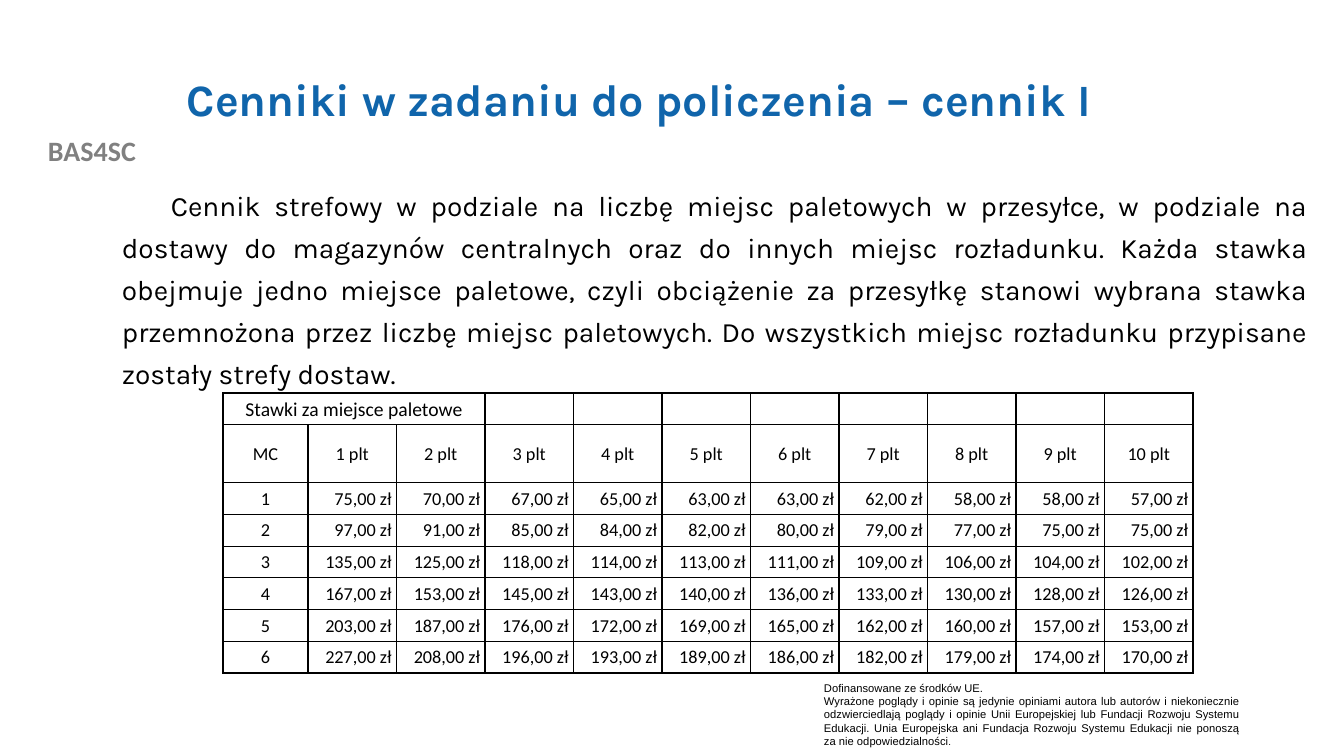
"""Build the slide with the zone price list per pallet place."""
from dataclasses import dataclass

from lxml import etree
from pptx import Presentation
from pptx.dml.color import RGBColor
from pptx.enum.text import MSO_ANCHOR, MSO_AUTO_SIZE, PP_ALIGN
from pptx.oxml.ns import qn
from pptx.util import Emu, Pt

LEFT, MID, RIGHT, JUST = PP_ALIGN.LEFT, PP_ALIGN.CENTER, PP_ALIGN.RIGHT, PP_ALIGN.JUSTIFY
TOP, CENTRE = MSO_ANCHOR.TOP, MSO_ANCHOR.MIDDLE
FIXED, GROW = MSO_AUTO_SIZE.NONE, MSO_AUTO_SIZE.SHAPE_TO_FIT_TEXT
SCALE = 914400 / 100.8
BLACK = "000000"


@dataclass(frozen=True)
class Label:
    """A text box; each paragraph is a tuple of (text, size) runs."""
    left: int
    top: int
    width: int
    height: int
    lines: tuple
    face: str
    tint: str = BLACK
    bold: bool = False
    align: PP_ALIGN = JUST
    anchor: MSO_ANCHOR = TOP
    fit: MSO_AUTO_SIZE = GROW
    pitch: float = 1.0
    after: int = 0
    indent: int = 0


LABELS = (
    Label(0, 129, 184, 44, ((("BAS4SC", 20),),), "Calibri", "808080", True, MID),
    Label(814, 676, 436, 78, (
        (("Dofinansowane ze środków UE.", 8),),
        (("Wyrażone poglądy i opinie są jedynie opiniami autora lub autorów i "
          "niekoniecznie odzwierciedlają poglądy i opinie Unii Europejskiej lub "
          "Fundacji Rozwoju Systemu Edukacji. Unia Europejska ani Fundacja Rozwoju "
          "Systemu Edukacji nie ponoszą za nie odpowiedzialności", 8), (".", 7)),
    ), "Arial"),
    Label(177, 40, 1075, 123, ((("Cenniki w zadaniu do policzenia – cennik I", 32),),),
          "Karla", "1065AB", True, LEFT, CENTRE, FIXED, 0.9),
    Label(112, 175, 1206, 218, ((
        ("Cennik strefowy w podziale na liczbę miejsc paletowych w przesyłce, w "
         "podziale na dostawy do magazynów centralnych oraz do innych miejsc "
         "rozładunku. Każda stawka obejmuje jedno miejsce paletowe, czyli obciążenie "
         "za przesyłkę stanowi wybrana stawka przemnożona przez liczbę miejsc "
         "paletowych. Do wszystkich miejsc rozładunku przypisane zostały strefy "
         "dostaw.", 20),),), "Karla", pitch=1.25, after=6, indent=49),
)

RATES = (
    (75, 70, 67, 65, 63, 63, 62, 58, 58, 57),
    (97, 91, 85, 84, 82, 80, 79, 77, 75, 75),
    (135, 125, 118, 114, 113, 111, 109, 106, 104, 102),
    (167, 153, 145, 143, 140, 136, 133, 130, 128, 126),
    (203, 187, 176, 172, 169, 165, 162, 160, 157, 153),
    (227, 208, 196, 193, 189, 186, 182, 179, 174, 170),
)
WIDTH, HEIGHT = 970, 280
FIRST, HEAD = 85, 58


def px(length: float) -> Emu:
    """Turn pixels into EMU."""
    return Emu(round(length * SCALE))


def ink(tint: str) -> RGBColor:
    """Turn a hex string into a colour."""
    return RGBColor.from_string(tint)


def style(font, face: str, size: int, tint: str, bold: bool = False) -> None:
    """Set the look of a font."""
    font.name, font.size, font.bold = face, Pt(size), bold
    font.color.rgb = ink(tint)


def add_label(slide, label: Label) -> None:
    """Draw one text box."""
    box = slide.shapes.add_textbox(*map(px, (label.left, label.top, label.width, label.height)))
    frame = box.text_frame
    frame.word_wrap = True
    frame.auto_size, frame.vertical_anchor = label.fit, label.anchor
    for i, line in enumerate(label.lines):
        para = frame.add_paragraph() if i else frame.paragraphs[0]
        para.alignment, para.line_spacing = label.align, label.pitch
        para.space_after = Pt(label.after)
        if label.indent:
            para._p.get_or_add_pPr().set("indent", str(px(label.indent)))
        base = line[0][1]
        style(para.font, label.face, base, label.tint, label.bold)
        for text, size in line:
            run = para.add_run()
            run.text = text
            if size != base:
                run.font.size = Pt(size)


def add_edges(cell) -> None:
    """Give a cell a thin black line on each side."""
    props = cell._tc.get_or_add_tcPr()
    for side in ("lnL", "lnR", "lnT", "lnB"):
        edge = etree.SubElement(props, qn(f"a:{side}"), w=str(Pt(1)))
        fill = etree.SubElement(edge, qn("a:solidFill"))
        etree.SubElement(fill, qn("a:srgbClr"), val=BLACK)


def fill_cell(cell, text: str, size: int, align: PP_ALIGN) -> None:
    """Write and style one cell."""
    add_edges(cell)
    cell.fill.background()
    cell.vertical_anchor = CENTRE
    cell.margin_left = cell.margin_top = px(1)
    cell.margin_right = px(5 if align == RIGHT else 1)
    cell.margin_bottom = px(0)
    cell.text = text
    para = cell.text_frame.paragraphs[0]
    para.alignment = align
    style(para.font, "Calibri", size, BLACK)


def add_rates(slide) -> None:
    """Draw the table of rates by zone and number of places."""
    count = len(RATES[0])
    rows = [["Stawki za miejsce paletowe"] + [""] * count,
            ["MC"] + [f"{n} plt" for n in range(1, count + 1)]]
    rows += [[str(zone)] + [f"{rate},00 zł" for rate in rates]
             for zone, rates in enumerate(RATES, 1)]
    table = slide.shapes.add_table(len(rows), count + 1, px(223), px(393),
                                   px(WIDTH), px(HEIGHT)).table
    table.first_row = table.horz_banding = False
    for c, col in enumerate(table.columns):
        col.width = px((WIDTH - FIRST) / count if c else FIRST)
    for r, texts in enumerate(rows):
        table.rows[r].height = px(HEAD if r == 1 else (HEIGHT - HEAD) / (len(rows) - 1))
        for c, text in enumerate(texts):
            fill_cell(table.cell(r, c), text, 13 if r else 14, RIGHT if r > 1 and c else MID)
    table.cell(0, 0).merge(table.cell(0, 2))


def main() -> None:
    """Build and save the slide."""
    deck = Presentation()
    deck.slide_width, deck.slide_height = px(1344), px(756)
    slide = deck.slides.add_slide(deck.slide_layouts[6])
    for label in LABELS:
        add_label(slide, label)
    add_rates(slide)
    deck.save("out.pptx")


if __name__ == "__main__":
    main()
